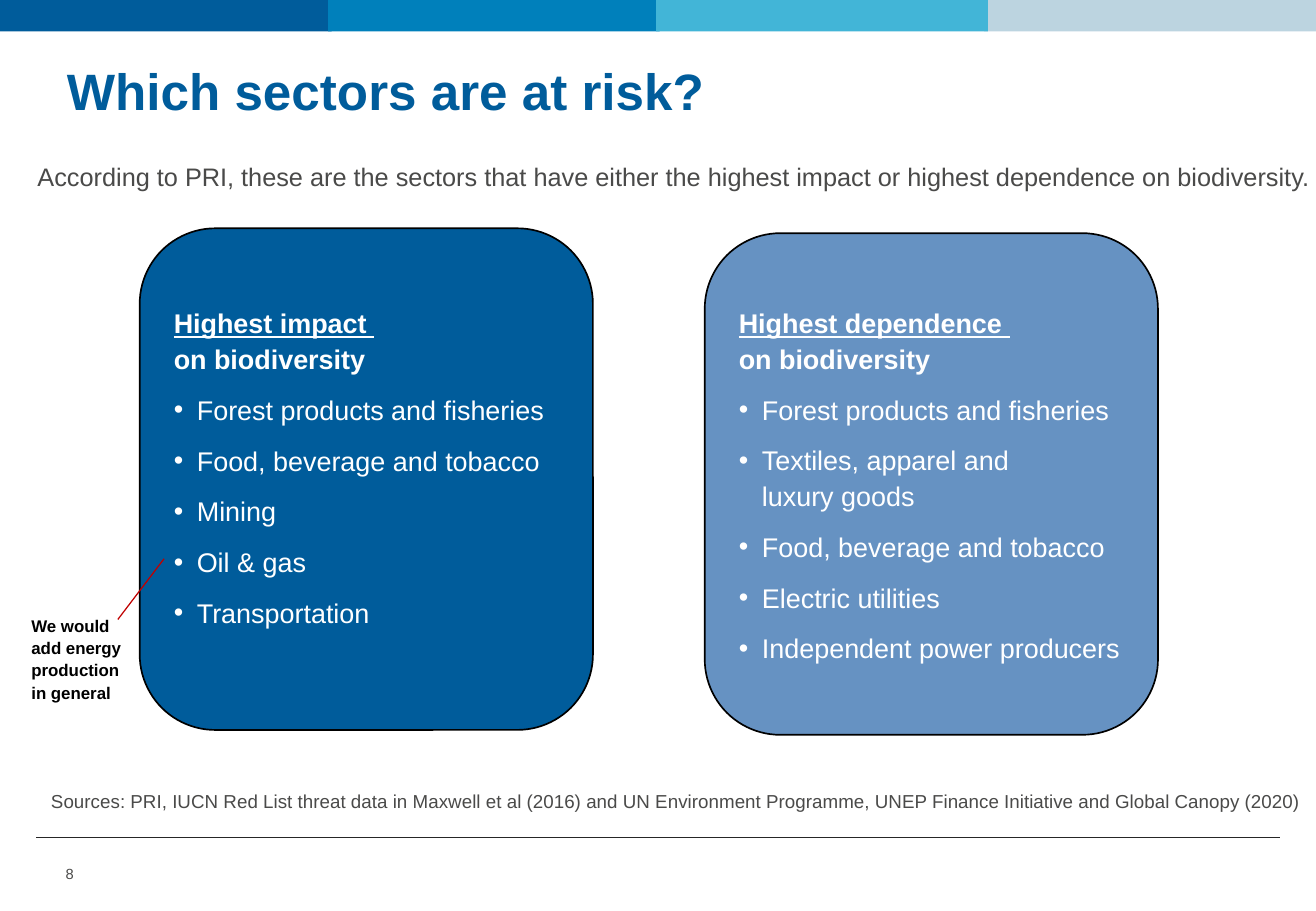
from pptx import Presentation
from pptx.dml.color import RGBColor
from pptx.enum.shapes import MSO_CONNECTOR as Connector, MSO_SHAPE as Shape
from pptx.enum.text import MSO_ANCHOR as Anchor, PP_ALIGN as Align
from pptx.oxml.ns import qn
from pptx.util import Inches, Pt
from lxml import etree

NAVY = RGBColor(0x00, 0x5C, 0x9B)
BLUE = RGBColor(0x00, 0x80, 0xBB)
SKY = RGBColor(0x42, 0xB5, 0xD7)
PALE = RGBColor(0xBC, 0xD4, 0xE0)
STEEL = RGBColor(0x66, 0x92, 0xC2)
GREY = RGBColor(0x4A, 0x4A, 0x49)
CHARCOAL = RGBColor(0x26, 0x26, 0x26)
RED = RGBColor(0xC0, 0x00, 0x00)
BLACK = RGBColor(0x00, 0x00, 0x00)
WHITE = RGBColor(0xFF, 0xFF, 0xFF)


class SectorSlide:
    font = "Arial"
    line_spacing = 1.1

    def __init__(self, deck):
        self.slide = deck.slides.add_slide(deck.slide_layouts[6])
        self.shapes = self.slide.shapes

    def run(self, paragraph, words, size, color, bold=False, underline=False):
        run = paragraph.add_run()
        run.text = words
        font = run.font
        font.name, font.size = self.font, Pt(size)
        font.bold, font.underline = bold, underline
        font.color.rgb = color

    def lines(self, paragraph, words, size, color, bold=False, underline_first=False):
        """Write each line of words as a run, with line breaks between them."""
        for number, line in enumerate(words.split("\n")):
            if number:
                paragraph.add_line_break()
            self.run(paragraph, line, size, color, bold,
                     underline_first and number == 0)

    def bullet(self, paragraph):
        properties = paragraph._p.get_or_add_pPr()
        properties.set("marL", str(Inches(0.19)))
        properties.set("indent", str(Inches(-0.19)))
        etree.SubElement(properties, qn("a:buFont"), typeface=self.font)
        etree.SubElement(properties, qn("a:buChar"), char="•")

    def block(self, kind, left, top, width, height, fill, line=None):
        block = self.shapes.add_shape(kind, Inches(left), Inches(top),
                                      Inches(width), Inches(height))
        block.shadow.inherit = False
        block.fill.solid()
        block.fill.fore_color.rgb = fill
        if line is None:
            block.line.fill.background()
        else:
            block.line.color.rgb = line
            block.line.width = Pt(1)
        return block

    def line(self, start, end, color, width):
        line = self.shapes.add_connector(
            Connector.STRAIGHT, *(Inches(value) for value in start + end))
        line.line.color.rgb = color
        line.line.width = Pt(width)
        etree.SubElement(line._element.spPr, qn("a:effectLst"))

    def text(self, left, top, width, height, words, size, color, bold=False,
             spacing=None, align=Align.LEFT, anchor=Anchor.TOP,
             left_inset=0.1, right_inset=0.1):
        box = self.shapes.add_textbox(Inches(left), Inches(top),
                                      Inches(width), Inches(height))
        frame = box.text_frame
        frame.word_wrap = True
        frame.vertical_anchor = anchor
        frame.margin_left, frame.margin_right = Inches(left_inset), Inches(right_inset)
        paragraph = frame.paragraphs[0]
        paragraph.alignment = align
        paragraph.line_spacing = spacing or self.line_spacing
        self.run(paragraph, words, size, color, bold)

    def panel(self, left, top, fill, heading, sectors, bottom_inset=0.05):
        panel = self.block(Shape.ROUNDED_RECTANGLE, left, top, 3.73, 4.13, fill, BLACK)
        frame = panel.text_frame
        frame.word_wrap = True
        frame.vertical_anchor = Anchor.MIDDLE
        frame.margin_bottom = Inches(bottom_inset)
        title = frame.paragraphs[0]
        title.alignment = Align.LEFT
        title.line_spacing = self.line_spacing
        self.lines(title, heading, 16, WHITE, bold=True, underline_first=True)
        for sector in sectors:
            item = frame.add_paragraph()
            self.bullet(item)
            item.alignment = Align.LEFT
            item.line_spacing = self.line_spacing
            item.space_before = Pt(9)
            self.lines(item, sector, 16, WHITE)


def main():
    deck = Presentation()
    deck.slide_width, deck.slide_height = Inches(10.83), Inches(7.5)
    page = SectorSlide(deck)

    # The third band overlaps the fourth, so it is drawn last.
    for column, color in ((0, NAVY), (1, BLUE), (3, PALE), (2, SKY)):
        page.block(Shape.RECTANGLE, column * 2.7, 0, 2.73, 0.26, color)
    page.line((0.3, 6.89), (10.53, 6.89), CHARCOAL, 0.25)

    page.text(0.55, 0.52, 9.72, 0.79, "Which sectors are at risk?", 30.3, NAVY,
              bold=True, spacing=Pt(30.3), left_inset=0)
    page.text(0.21, 6.31, 10.62, 0.48,
              "Sources: PRI, IUCN Red List threat data in Maxwell et al (2016) and "
              "UN Environment Programme, UNEP Finance Initiative and Global Canopy (2020)",
              11.1, GREY, spacing=Pt(23.8), left_inset=0.21, right_inset=0)
    page.text(0.36, 7.05, 0.43, 0.29, "8", 8.7, GREY, spacing=1.0,
              align=Align.CENTER, anchor=Anchor.MIDDLE)

    page.panel(1.15, 1.88, NAVY, "Highest impact \non biodiversity",
               ["Forest products and fisheries", "Food, beverage and tobacco",
                "Mining", "Oil & gas", "Transportation"], bottom_inset=0.26)
    page.panel(5.8, 1.92, STEEL, "Highest dependence \non biodiversity",
               ["Forest products and fisheries", "Textiles, apparel and \nluxury goods",
                "Food, beverage and tobacco", "Electric utilities",
                "Independent power producers"])

    page.text(0.21, 1.25, 10.62, 0.38,
              "According to PRI, these are the sectors that have either the highest "
              "impact or highest dependence on biodiversity.", 15, GREY, right_inset=0)
    page.text(0.16, 5, 0.99, 0.84, "We would add energy production in general",
              10, BLACK, bold=True)
    page.line((0.97, 5.1), (1.35, 4.6), RED, 0.75)

    deck.save("out.pptx")


if __name__ == "__main__":
    main()
